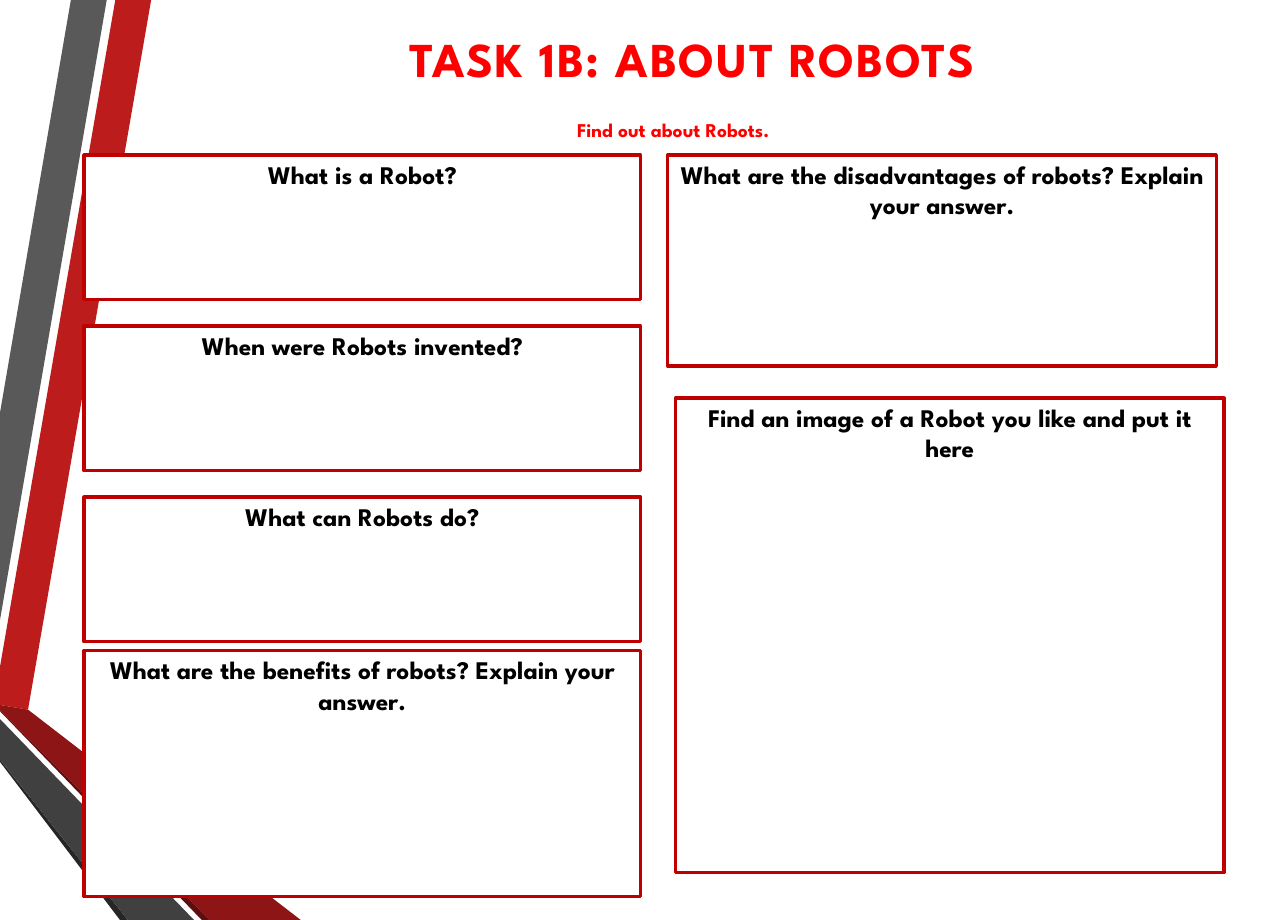
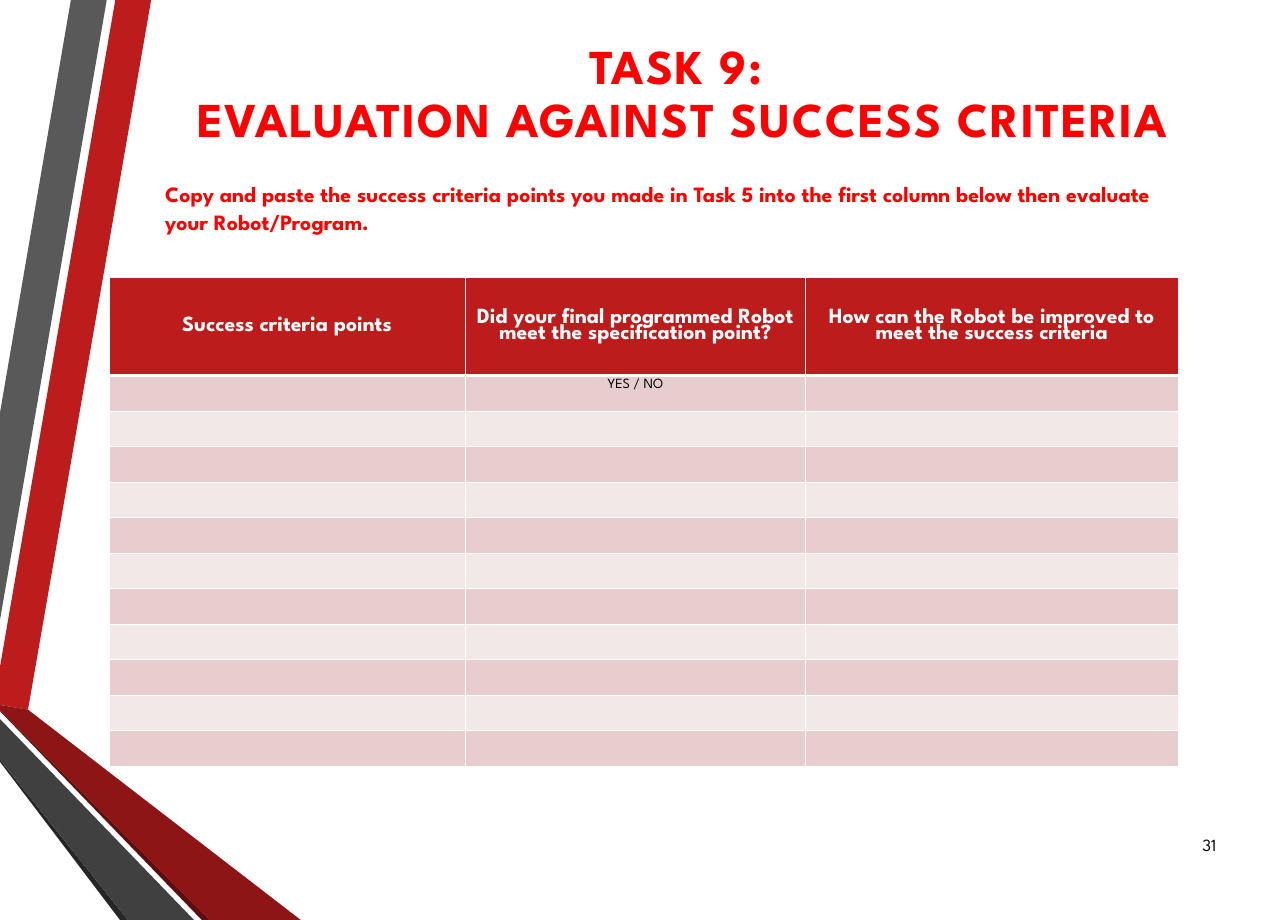
from dataclasses import dataclass

from lxml.etree import SubElement
from pptx import Presentation
from pptx.dml.color import RGBColor
from pptx.enum.shapes import MSO_SHAPE as Preset
from pptx.enum.text import MSO_ANCHOR as Anchor, PP_ALIGN as Align
from pptx.oxml.ns import qn
from pptx.util import Inches, Pt


@dataclass(frozen=True)
class Theme:
    font: str = "League Spartan"
    black: str = "000000"
    white: str = "FFFFFF"
    heading: str = "FF0000"
    box_line: str = "C00000"
    table_head: str = "BC1C1C"
    row_fills: tuple = ("E7CDCD", "F3E8E8")
    title_size: float = 45
    subtitle_size: float = 18
    instruction_size: float = 20.2
    question_size: float = 23.4
    head_size: float = 20
    cell_size: float = 13
    number_size: float = 15.8
    title_tracking: int = 150


THEME = Theme()

# Shared bands: fill and outline points in inches, back to front
BANDS = [
    ("BC1C1C", [(0, 8.56), (0, 9.05), (0.36, 9.11), (1.94, 0), (1.48, 0)]),
    ("595959", [(1.37, 0), (0.91, 0), (0, 5.3), (0, 7.96)]),
    ("262626", [(0, 9.75), (0, 9.78), (1.54, 11.81), (1.64, 11.81)]),
    ("5E0E0E", [(0, 9.12), (0, 9.13), (2.59, 11.81), (2.69, 11.81)]),
    ("8D1515", [(0, 9.12), (2.69, 11.81), (3.86, 11.81), (0.36, 9.11), (0, 9.05)]),
    ("404040", [(0, 9.75), (1.64, 11.81), (2.49, 11.81), (0, 9.23)]),
]

# Content of the robots slide
ROBOTS_TITLE = ["TASK 1B: ABOUT ROBOTS"]
ROBOTS_SUBTITLE = ["Find out about Robots."]
SHORT_QUESTIONS = ["What is a Robot?", "When were Robots invented?", "What can Robots do?"]
LARGE_BOXES = [
    ("What are the benefits of robots? Explain your answer.", (1.08, 8.35, 7.14, 3.16)),
    ("What are the disadvantages of robots? Explain your answer.", (8.57, 1.99, 7.04, 2.71)),
    ("Find an image of a Robot you like and put it here", (8.67, 5.11, 7.04, 6.09)),
]
QUESTION_LEFT, QUESTION_TOP, QUESTION_WIDTH, QUESTION_HEIGHT = 1.08, 1.99, 7.14, 1.86
QUESTION_GAP = 0.335

# Content of the evaluation slide
EVALUATION_TITLE = ["TASK 9: ", "EVALUATION AGAINST SUCCESS CRITERIA"]
INSTRUCTION = [
    "Copy and paste the success criteria points you made in Task 5 into the first column "
    "below then evaluate your Robot/Program."
]
PAGE_NUMBER = ["31"]
CRITERIA_HEAD = [
    "Success criteria points",
    "Did your final programmed Robot meet the specification point?",
    "How can the Robot be improved to meet the success criteria",
]
CRITERIA_ROWS = [["", "YES / NO", ""]] + [["", "", ""]] * 10
COLUMN_WIDTHS = [4.57, 4.37, 4.78]
HEAD_HEIGHT, ROW_HEIGHT = 1.26, 0.456
WIDE_INSETS = (0.15, 0.07)
CELL_INSETS = (0.11, 0.06)


def set_values(target, values):
    for name, value in values.items():
        setattr(target, name, value)


def set_insets(target, insets):
    side, end = map(Inches, insets)
    set_values(target, dict(margin_left=side, margin_right=side, margin_top=end, margin_bottom=end))


def write(frame, lines, size, color, bold=True, tracking=None, **layout):
    """Write one paragraph per line; layout holds paragraph values."""
    for index, line in enumerate(lines):
        paragraph = frame.add_paragraph() if index else frame.paragraphs[0]
        set_values(paragraph, {"alignment": Align.CENTER, **layout})
        run = paragraph.add_run()
        run.text = line
        set_values(run.font, dict(name=THEME.font, size=Pt(size), bold=bold))
        run.font.color.rgb = RGBColor.from_string(color)
        if tracking:
            run.font._element.set("spc", str(tracking))


def paint(shape, fill, line=None, width=3):
    shape.shadow.inherit = False
    shape.fill.solid()
    shape.fill.fore_color.rgb = RGBColor.from_string(fill)
    if line:
        shape.line.color.rgb = RGBColor.from_string(line)
        shape.line.width = Pt(width)
    else:
        shape.line.fill.background()


def add_text(slide, place, lines, size, color, insets=(0.1, 0.05), anchor=Anchor.TOP, **style):
    frame = slide.shapes.add_textbox(*map(Inches, place)).text_frame
    set_values(frame, dict(word_wrap=True, vertical_anchor=anchor))
    set_insets(frame, insets)
    write(frame, lines, size, color, **style)


def add_title(slide, place, lines):
    add_text(slide, place, lines, THEME.title_size, THEME.heading, WIDE_INSETS,
             tracking=THEME.title_tracking, line_spacing=0.9)


def add_box(slide, place, text):
    box = slide.shapes.add_shape(Preset.RECTANGLE, *map(Inches, place))
    paint(box, THEME.white, THEME.box_line)
    set_values(box.text_frame, dict(word_wrap=True, vertical_anchor=Anchor.TOP))
    write(box.text_frame, [text], THEME.question_size, THEME.black)


def add_slide(presentation):
    """Blank slide with the shared bands."""
    slide = presentation.slides.add_slide(presentation.slide_layouts[6])
    bands = slide.shapes.add_group_shape().shapes
    for fill, points in BANDS:
        start, *others = [(Inches(x), Inches(y)) for x, y in points]
        builder = bands.build_freeform(*start)
        builder.add_line_segments(others, close=True)
        paint(builder.convert_to_shape(), fill)
    return slide


def set_borders(cell, widths):
    properties = cell._tc.get_or_add_tcPr()
    for side, width in widths.items():
        line = SubElement(properties, qn(f"a:ln{side}"), w=str(Pt(width)))
        SubElement(SubElement(line, qn("a:solidFill")), qn("a:srgbClr"), val=THEME.white)


def add_criteria_table(slide, left, top):
    rows = [CRITERIA_HEAD] + CRITERIA_ROWS
    heights = [HEAD_HEIGHT] + [ROW_HEIGHT] * len(CRITERIA_ROWS)
    place = (left, top, sum(COLUMN_WIDTHS), sum(heights))
    table = slide.shapes.add_table(len(rows), len(COLUMN_WIDTHS), *map(Inches, place)).table
    for column, width in zip(table.columns, COLUMN_WIDTHS):
        column.width = Inches(width)
    for index, (texts, height) in enumerate(zip(rows, heights)):
        table.rows[index].height = Inches(height)
        is_head = index == 0
        fill = THEME.table_head if is_head else THEME.row_fills[(index - 1) % 2]
        size, color = (THEME.head_size, THEME.white) if is_head else (THEME.cell_size, THEME.black)
        for cell, text in zip(table.rows[index].cells, texts):
            set_borders(cell, dict(L=1, R=1, T=3 if index == 1 else 1, B=3 if is_head else 1))
            cell.fill.solid()
            cell.fill.fore_color.rgb = RGBColor.from_string(fill)
            cell.vertical_anchor = Anchor.MIDDLE if is_head else Anchor.TOP
            set_insets(cell, CELL_INSETS)
            if text:
                write(cell.text_frame, [text], size, color, bold=is_head, line_spacing=0.8)


def build_robots(presentation):
    slide = add_slide(presentation)
    add_title(slide, (2.05, 0.39, 13.68, 1.04), ROBOTS_TITLE)
    add_text(slide, (1.63, 1.47, 14.02, 0.4), ROBOTS_SUBTITLE, THEME.subtitle_size, THEME.heading)
    for index, question in enumerate(SHORT_QUESTIONS):
        top = QUESTION_TOP + index * (QUESTION_HEIGHT + QUESTION_GAP)
        add_box(slide, (QUESTION_LEFT, top, QUESTION_WIDTH, QUESTION_HEIGHT), question)
    for text, place in LARGE_BOXES:
        add_box(slide, place, text)


def build_evaluation(presentation):
    slide = add_slide(presentation)
    add_text(slide, (14.96, 10.53, 0.75, 0.63), PAGE_NUMBER, THEME.number_size, THEME.black,
             anchor=Anchor.MIDDLE, bold=False, alignment=Align.RIGHT)
    add_title(slide, (1.53, 0.48, 14.47, 1.48), EVALUATION_TITLE)
    add_text(slide, (1.97, 2.21, 13.15, 1.11), INSTRUCTION, THEME.instruction_size, THEME.heading,
             WIDE_INSETS, alignment=Align.LEFT, line_spacing=1.1, space_before=Pt(7))
    add_criteria_table(slide, 1.4, 3.56)


def main():
    presentation = Presentation()
    set_values(presentation, dict(slide_width=Inches(16.53), slide_height=Inches(11.81)))
    build_robots(presentation)
    build_evaluation(presentation)
    presentation.save("out.pptx")


if __name__ == "__main__":
    main()
